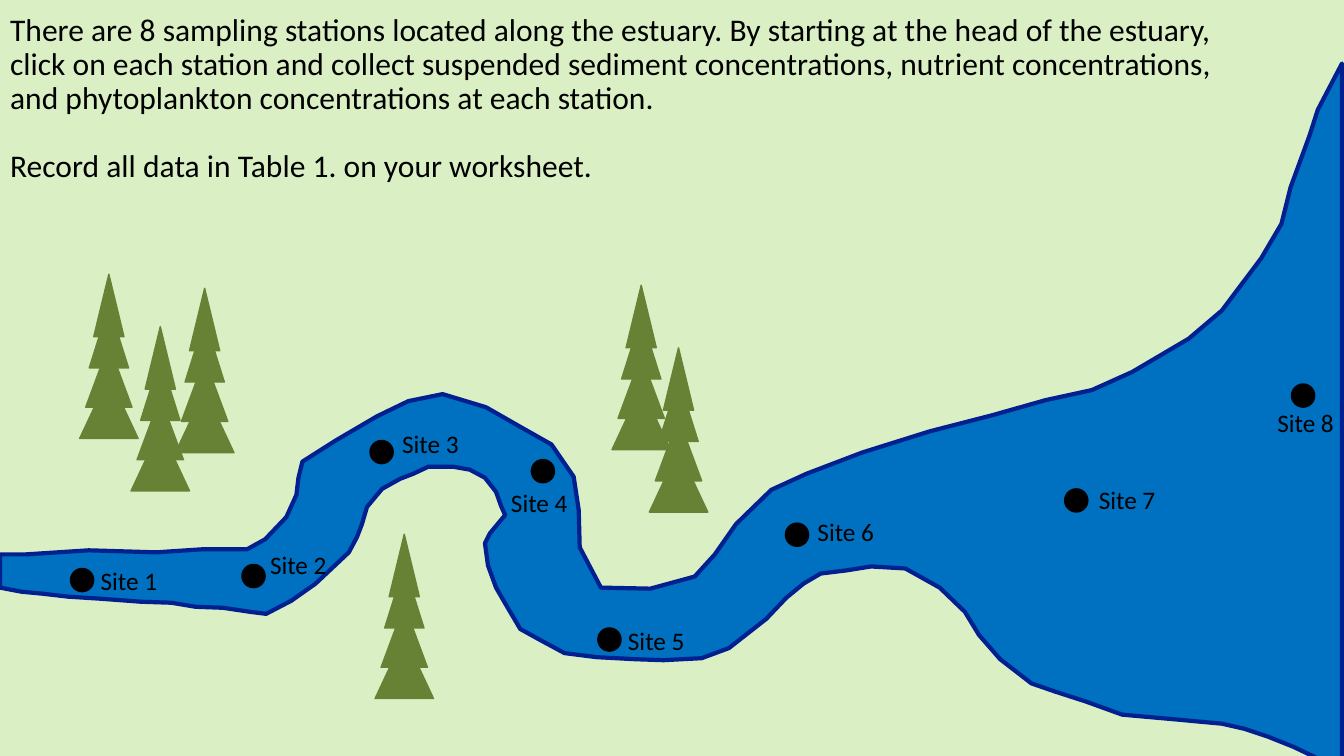
import pptx
import pptx.util
import pptx.dml.color
import pptx.enum.shapes
import pptx.enum.text

Inches = pptx.util.Inches
Pt = pptx.util.Pt
SHAPES = pptx.enum.shapes.MSO_SHAPE
ALIGN = pptx.enum.text.PP_ALIGN
ANCHOR = pptx.enum.text.MSO_ANCHOR
AUTO_SIZE = pptx.enum.text.MSO_AUTO_SIZE

FONT = "Calibri"
LAND = "DBEFC5"
WATER = "0070C0"
BANK = "00208F"
TREE = "688235"
BLACK = "000000"

INSTRUCTIONS = [
    "There are 8 sampling stations located along the estuary. By starting at the "
    "head of the estuary, click on each station and collect suspended sediment "
    "concentrations, nutrient concentrations, and phytoplankton concentrations "
    "at each station.",
    "Record all data in Table 1. on your worksheet.",
]

SOUTH_BANK = [
    (0, 5.83), (0.21, 5.87), (0.42, 5.89), (0.68, 5.92), (1, 5.94), (1.4, 5.97),
    (1.7, 5.98), (1.94, 6.02), (2.21, 6.03), (2.48, 6.07), (2.64, 6.09),
    (2.89, 5.96), (3.13, 5.79), (3.46, 5.48), (3.54, 5.33), (3.59, 5.2),
    (3.64, 5.03), (3.79, 4.85), (3.97, 4.75), (4.1, 4.7), (4.25, 4.63),
    (4.49, 4.63), (4.66, 4.66), (4.81, 4.74), (4.92, 4.88), (4.97, 5.02),
    (5.01, 5.11), (4.86, 5.29), (4.81, 5.39), (4.84, 5.61), (4.92, 5.83),
    (5.03, 6.02), (5.16, 6.24), (5.34, 6.34), (5.6, 6.48), (5.92, 6.52),
    (6.3, 6.54), (6.58, 6.55), (6.96, 6.53), (7.23, 6.43), (7.6, 6.14),
    (7.8, 5.93), (7.97, 5.79), (8.14, 5.69), (8.39, 5.66), (8.64, 5.62),
    (8.98, 5.64), (9.32, 5.83), (9.57, 6.07), (9.71, 6.3), (9.92, 6.54),
    (10.23, 6.78), (10.46, 6.86), (10.77, 6.96), (11.13, 7.09), (11.69, 7.14),
    (11.9, 7.16), (12.12, 7.18), (12.34, 7.23), (12.58, 7.31), (12.83, 7.41),
    (13.31, 7.64),
]

NORTH_BANK = [
    (13.31, 0.63), (13.07, 1.09), (12.99, 1.34), (12.8, 1.86), (12.71, 2.22),
    (12.51, 2.56), (12.12, 3.08), (11.79, 3.36), (11.23, 3.69), (10.83, 3.87),
    (10.37, 3.97), (9.84, 4.12), (9.22, 4.28), (8.55, 4.49), (8, 4.7),
    (7.65, 4.86), (7.3, 5.2), (7.09, 5.5), (6.89, 5.72), (6.45, 5.84),
    (5.96, 5.83), (5.75, 5.43), (5.74, 5.06), (5.69, 4.73), (5.47, 4.41),
    (5.17, 4.24), (4.82, 4.04), (4.39, 3.91), (4.05, 3.98), (3.74, 4.13),
    (3.33, 4.37), (3, 4.58), (2.96, 4.74), (2.94, 4.91), (2.84, 5.13),
    (2.63, 5.35), (2.45, 5.45), (2, 5.45), (1.55, 5.48), (0.88, 5.46),
    (0.26, 5.5), (0, 5.5),
]

TREES = [(0.79, 2.72), (1.3, 3.24), (1.74, 2.86), (6.07, 2.83), (3.72, 5.3), (6.44, 3.45)]
TREE_WIDTH = 0.58
TIERS = [(0, 0.3), (0.31, 0.39), (0.7, 0.46), (1.01, TREE_WIDTH)]
TIER_HEIGHT = 0.62

STATIONS = [
    ((0.7, 5.64), (0.9, 5.56)),
    ((2.4, 5.6), (2.58, 5.4)),
    ((3.67, 4.37), (3.89, 4.2)),
    ((5.27, 4.56), (4.97, 4.79)),
    ((5.93, 6.23), (6.13, 6.15)),
    ((7.79, 5.19), (8.01, 5.07)),
    ((10.56, 4.85), (10.8, 4.76)),
    ((12.81, 3.81), (12.57, 3.99)),
]
DOT = 0.23


def rgb(value):
    return pptx.dml.color.RGBColor.from_string(value)


def paint(sp, fill, line, width=1):
    sp.shadow.inherit = False
    sp.fill.solid()
    sp.fill.fore_color.rgb = rgb(fill)
    sp.line.color.rgb = rgb(line)
    sp.line.width = Pt(width)


def format_paragraph(p, size):
    p.alignment = ALIGN.LEFT
    for r in p.runs:
        r.font.name = FONT
        r.font.size = Pt(size)
        r.font.color.rgb = rgb(BLACK)


def add_title(s):
    sp = s.shapes.title
    sp.left, sp.top = Inches(0), Inches(-0.06)
    sp.width, sp.height = Inches(12.17), Inches(1.94)
    tf = sp.text_frame
    tf.text = "\n".join(INSTRUCTIONS)
    tf.word_wrap = True
    tf.auto_size = AUTO_SIZE.NONE
    tf.vertical_anchor = ANCHOR.BOTTOM
    for i, p in enumerate(tf.paragraphs):
        p.line_spacing = 0.9
        p.space_before = Pt(24.5 if i else 0)
        format_paragraph(p, 22.5)


def add_estuary(s):
    start, *points = [(Inches(x), Inches(y)) for x, y in SOUTH_BANK + NORTH_BANK]
    builder = s.shapes.build_freeform(*start)
    builder.add_line_segments(points, close=True)
    paint(builder.convert_to_shape(), WATER, BANK, 3)


def add_tree(s, left, top):
    tree = s.shapes.add_group_shape()
    for drop, width in TIERS:
        sp = tree.shapes.add_shape(
            SHAPES.ISOSCELES_TRIANGLE,
            Inches(left + (TREE_WIDTH - width) / 2), Inches(top + drop),
            Inches(width), Inches(TIER_HEIGHT))
        paint(sp, TREE, TREE)


def add_dot(s, left, top):
    sp = s.shapes.add_shape(
        SHAPES.OVAL, Inches(left), Inches(top), Inches(DOT), Inches(DOT))
    paint(sp, BLACK, BLACK)


def add_label(s, text, left, top):
    sp = s.shapes.add_textbox(Inches(left), Inches(top), Inches(0.77), Inches(0.4))
    tf = sp.text_frame
    tf.text = text
    tf.word_wrap = False
    tf.auto_size = AUTO_SIZE.SHAPE_TO_FIT_TEXT
    format_paragraph(tf.paragraphs[0], 18)


def main():
    prs = pptx.Presentation()
    prs.slide_width, prs.slide_height = Inches(13.33), Inches(7.5)
    s = prs.slides.add_slide(prs.slide_layouts[5])
    s.background.fill.solid()
    s.background.fill.fore_color.rgb = rgb(LAND)
    add_title(s)
    add_estuary(s)
    for left, top in TREES:
        add_tree(s, left, top)
    for number, (dot, label) in enumerate(STATIONS, 1):
        add_dot(s, *dot)
        add_label(s, f"Site {number}", *label)
    prs.save("out.pptx")


if __name__ == "__main__":
    main()
